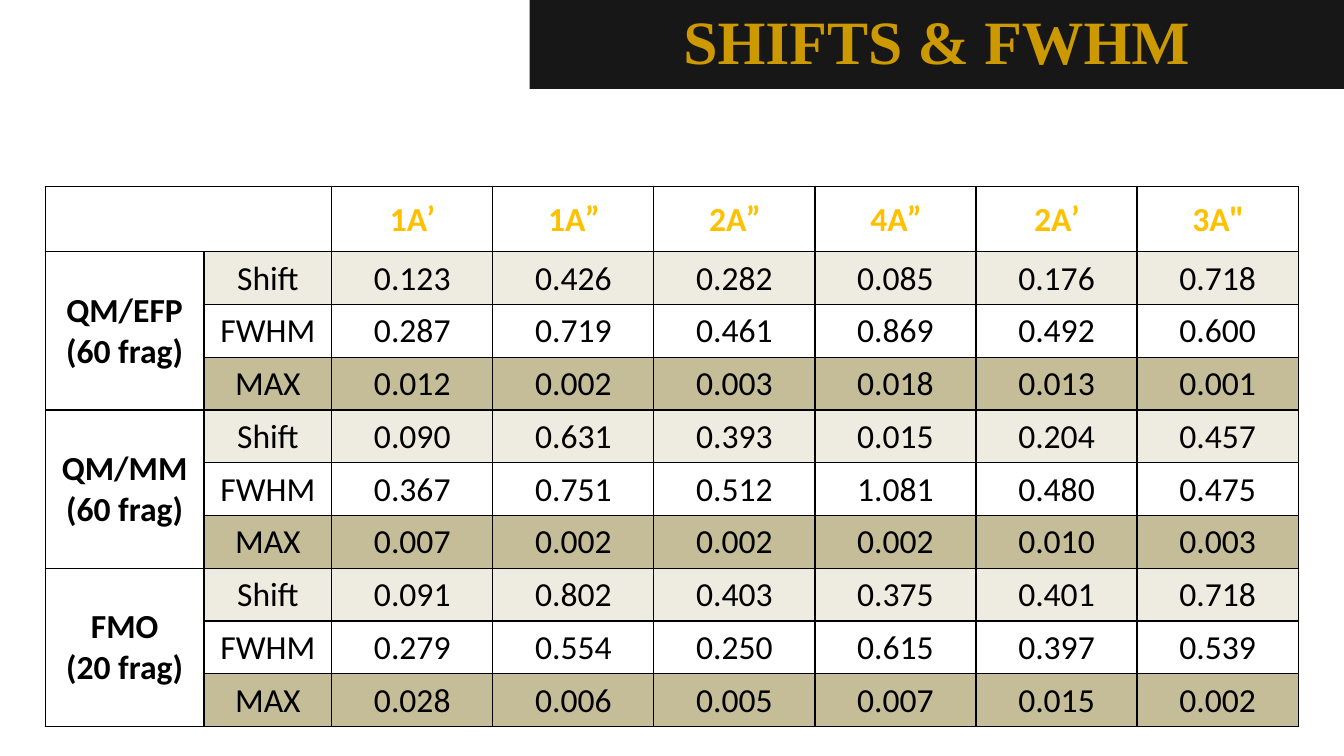
from lxml import etree
from pptx import Presentation
from pptx.dml.color import RGBColor
from pptx.enum.text import MSO_ANCHOR, MSO_AUTO_SIZE, PP_ALIGN
from pptx.oxml import parse_xml
from pptx.oxml.ns import nsdecls
from pptx.util import Cm, Pt

MIDDLE = MSO_ANCHOR.MIDDLE
CENTER = PP_ALIGN.CENTER
WHITE, BLACK, CHARCOAL = "FFFFFF", "000000", "181717"
GOLD, AMBER = "CC9900", "FFC000"

STATES = ["1A’", "1A”", "2A”", "4A”", "2A’", "3A\""]
MEASURES = [("Shift", "EEECE1"), ("FWHM", WHITE), ("MAX", "C4BD97")]
METHODS = [
    ("QM/EFP", "(60 frag)", [
        "0.123 0.426 0.282 0.085 0.176 0.718",
        "0.287 0.719 0.461 0.869 0.492 0.600",
        "0.012 0.002 0.003 0.018 0.013 0.001"]),
    ("QM/MM", "(60 frag)", [
        "0.090 0.631 0.393 0.015 0.204 0.457",
        "0.367 0.751 0.512 1.081 0.480 0.475",
        "0.007 0.002 0.002 0.002 0.010 0.003"]),
    ("FMO", "(20 frag)", [
        "0.091 0.802 0.403 0.375 0.401 0.718",
        "0.279 0.554 0.250 0.615 0.397 0.539",
        "0.028 0.006 0.005 0.007 0.015 0.002"]),
]


def color(value):
    return RGBColor.from_string(value)


def add_run(paragraph, text, text_color, size=24, bold=False, name="Calibri"):
    paragraph.alignment = CENTER
    run = paragraph.add_run()
    run.text = text
    font_format = {"size": Pt(size), "bold": bold, "name": name}
    for attribute, value in font_format.items():
        setattr(run.font, attribute, value)
    run.font.color.rgb = color(text_color)
    return run


presentation = Presentation()
presentation.slide_width = Cm(33.87)
presentation.slide_height = Cm(19.05)
slide = presentation.slides.add_slide(presentation.slide_layouts[5])

# Title band
title = slide.shapes.title
title_place = {"left": Cm(13.35), "top": Cm(0), "width": Cm(20.52), "height": Cm(2.24)}
for attribute, value in title_place.items():
    setattr(title, attribute, value)
title.fill.solid()
title.fill.fore_color.rgb = color(CHARCOAL)
title.text_frame.auto_size = MSO_AUTO_SIZE.NONE
title.text_frame.vertical_anchor = MIDDLE
title_paragraph = title.text_frame.paragraphs[0]
title_paragraph.line_spacing = 0.9
add_run(title_paragraph, "SHIFTS & FWHM", GOLD, 44, True, "Times New Roman")

# Table grid
column_widths = [4, 3.22] + [4.06] * len(STATES)
row_heights = [1.64] + [1.33] * (len(METHODS) * len(MEASURES))
table = slide.shapes.add_table(
    len(row_heights), len(column_widths), Cm(1.14), Cm(4.7),
    Cm(sum(column_widths)), Cm(sum(row_heights))).table
table.first_row = False
table.horz_banding = False
for column, width in zip(table.columns, column_widths):
    column.width = Cm(width)
for row, height in zip(table.rows, row_heights):
    row.height = Cm(height)

# Cell borders, fills and margins
cell_format = {"vertical_anchor": MIDDLE, "margin_left": Cm(0.03), "margin_right": Cm(0.03),
               "margin_top": Cm(0.03), "margin_bottom": Cm(0)}
for row_index, row in enumerate(table.rows):
    for column_index, cell in enumerate(row.cells):
        for attribute, value in cell_format.items():
            setattr(cell, attribute, value)
        properties = cell._tc.get_or_add_tcPr()
        for side in ("lnL", "lnR", "lnT", "lnB"):
            properties.append(parse_xml(
                f'<a:{side} {nsdecls("a")} w="12700"><a:solidFill>'
                f'<a:srgbClr val="{BLACK}"/></a:solidFill></a:{side}>'))
        in_body = row_index > 0 and column_index > 0
        fill_color = MEASURES[(row_index - 1) % len(MEASURES)][1] if in_body else WHITE
        cell.fill.solid()
        cell.fill.fore_color.rgb = color(fill_color)

# Header row: outlined state labels with the prime marks in Lato
table.cell(0, 0).merge(table.cell(0, 1))
outline = parse_xml(f'<a:ln {nsdecls("a")} w="9525"><a:solidFill>'
                    f'<a:srgbClr val="{CHARCOAL}"/></a:solidFill></a:ln>')
for column_index, state in enumerate(STATES, 2):
    paragraph = table.cell(0, column_index).text_frame.paragraphs[0]
    for text, font_name in ((state[:2], "Calibri"), (state[2:], "Lato")):
        run = add_run(paragraph, text, AMBER, bold=True, name=font_name)
        run.font._element.insert(0, etree.fromstring(etree.tostring(outline), outline.getroottree().parser))

# Body: one merged label and three measure rows per method
for method_index, (method, fragments, value_rows) in enumerate(METHODS):
    first_row = 1 + method_index * len(MEASURES)
    label = table.cell(first_row, 0)
    label.merge(table.cell(first_row + len(MEASURES) - 1, 0))
    add_run(label.text_frame.paragraphs[0], method, BLACK, bold=True)
    add_run(label.text_frame.add_paragraph(), fragments, BLACK, bold=True)
    for row_index, ((measure, _), values) in enumerate(zip(MEASURES, value_rows), first_row):
        for column_index, text in enumerate([measure] + values.split(), 1):
            add_run(table.cell(row_index, column_index).text_frame.paragraphs[0], text, BLACK)

presentation.save("out.pptx")
